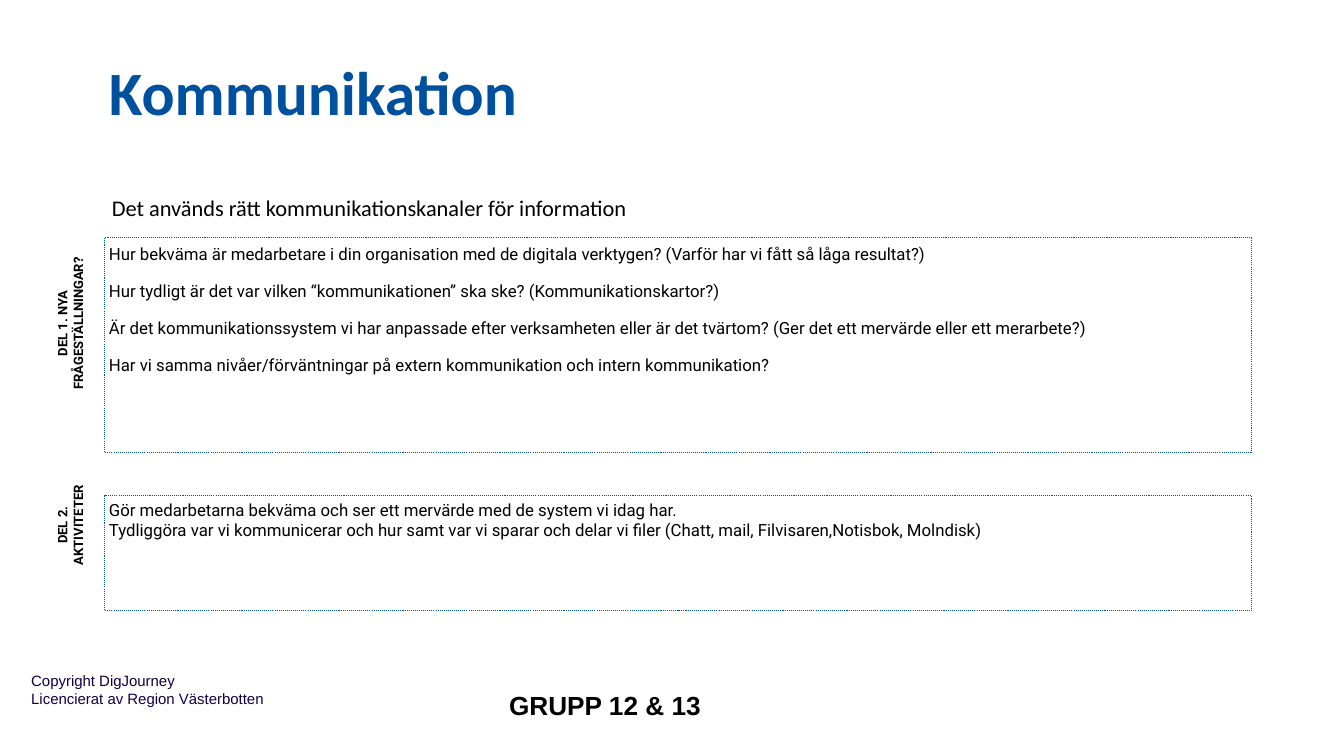
import pptx
import pptx.util
import pptx.dml.color
import pptx.enum.dml
import pptx.enum.shapes
import pptx.enum.text

Inches = pptx.util.Inches
Pt = pptx.util.Pt
RGBColor = pptx.dml.color.RGBColor
Align = pptx.enum.text.PP_ALIGN
Anchor = pptx.enum.text.MSO_ANCHOR

BLUE = RGBColor(0x00, 0x50, 0xA0)
NAVY = RGBColor(0x11, 0x00, 0x46)
BLACK = RGBColor(0x00, 0x00, 0x00)

NARROW_INSET = 0.04
WIDE_INSET = 0.13
BOX_LEFT, BOX_WIDTH = 1.04, 11.37


class SlideBuilder:
    def __init__(self, slide):
        self.slide = slide

    def fill_text(self, shape, lines, size, font, color=BLACK, bold=False,
                  align=Align.LEFT, anchor=Anchor.TOP, inset=NARROW_INSET,
                  line_spacing=None, gap=None):
        text_frame = shape.text_frame
        text_frame.word_wrap = True
        text_frame.vertical_anchor = anchor
        text_frame.margin_left = text_frame.margin_right = Inches(inset)
        text_frame.margin_top = text_frame.margin_bottom = Inches(inset)
        text_frame.text = "\n".join(lines)
        for index, paragraph in enumerate(text_frame.paragraphs):
            paragraph.alignment = align
            if line_spacing:
                paragraph.line_spacing = line_spacing
            if gap and index:
                paragraph.space_before = Pt(gap)
            for run in paragraph.runs:
                run.font.size = Pt(size)
                run.font.name = font
                run.font.bold = bold
                run.font.color.rgb = color

    def text_box(self, left, top, width, height, lines, size, font, **style):
        shape = self.slide.shapes.add_textbox(
            Inches(left), Inches(top), Inches(width), Inches(height))
        self.fill_text(shape, lines, size, font, **style)
        return shape

    def dotted_box(self, top, height, lines, **style):
        shape = self.slide.shapes.add_shape(
            pptx.enum.shapes.MSO_SHAPE.RECTANGLE,
            Inches(BOX_LEFT), Inches(top), Inches(BOX_WIDTH), Inches(height))
        shape.shadow.inherit = False
        shape.fill.background()
        shape.line.color.rgb = BLUE
        shape.line.width = Pt(0.75)
        shape.line.dash_style = pptx.enum.dml.MSO_LINE.ROUND_DOT
        self.fill_text(shape, lines, 12, "Roboto", **style)

    def side_label(self, top, lines):
        shape = self.text_box(-0.15, top, 1.7, 0.58, lines, 9.3, "Roboto", bold=True,
                              align=Align.CENTER, inset=WIDE_INSET)
        shape.rotation = 270


def main():
    presentation = pptx.Presentation()
    presentation.slide_width = Inches(13.33)
    presentation.slide_height = Inches(7.5)
    builder = SlideBuilder(presentation.slides.add_slide(presentation.slide_layouts[6]))

    # Title and statement
    builder.text_box(BOX_LEFT, -0.05, 9.92, 1.36, ["Kommunikation"], 44, "Calibri",
                     color=BLUE, bold=True, anchor=Anchor.BOTTOM)
    builder.text_box(1.07, 1.44, 7.96, 0.79,
                     ["Det används rätt kommunikationskanaler för information"],
                     16, "Calibri", anchor=Anchor.BOTTOM)

    # Part 1: new questions
    builder.side_label(2.92, ["DEL 1. NYA FRÅGESTÄLLNINGAR?"])
    builder.dotted_box(2.36, 2.13, [
        "Hur bekväma är medarbetare i din organisation med de digitala verktygen? "
        "(Varför har vi fått så låga resultat?)",
        "Hur tydligt är det var vilken “kommunikationen” ska ske? (Kommunikationskartor?)",
        "Är det kommunikationssystem vi har anpassade efter verksamheten eller är det "
        "tvärtom? (Ger det ett mervärde eller ett merarbete?)",
        "Har vi samma nivåer/förväntningar på extern kommunikation och intern kommunikation?",
    ], line_spacing=1.1, gap=10.7)

    # Part 2: activities
    builder.side_label(4.92, ["DEL 2.", "AKTIVITETER"])
    builder.dotted_box(4.92, 1.14, [
        "Gör medarbetarna bekväma och ser ett mervärde med de system vi idag har.",
        "Tydliggöra var vi kommunicerar och hur samt var vi sparar och delar vi filer "
        "(Chatt, mail, Filvisaren,Notisbok, Molndisk)",
    ])

    # Footer
    builder.text_box(0.18, 6.53, 4.37, 0.63,
                     ["Copyright DigJourney", "Licencierat av Region Västerbotten"],
                     10.7, "Arial", color=NAVY, inset=WIDE_INSET)
    builder.text_box(4.53, 6.71, 2.94, 0.58, ["GRUPP 12 & 13"], 18.7, "Arial",
                     bold=True, align=Align.CENTER, inset=WIDE_INSET)

    presentation.save("out.pptx")


if __name__ == "__main__":
    main()
